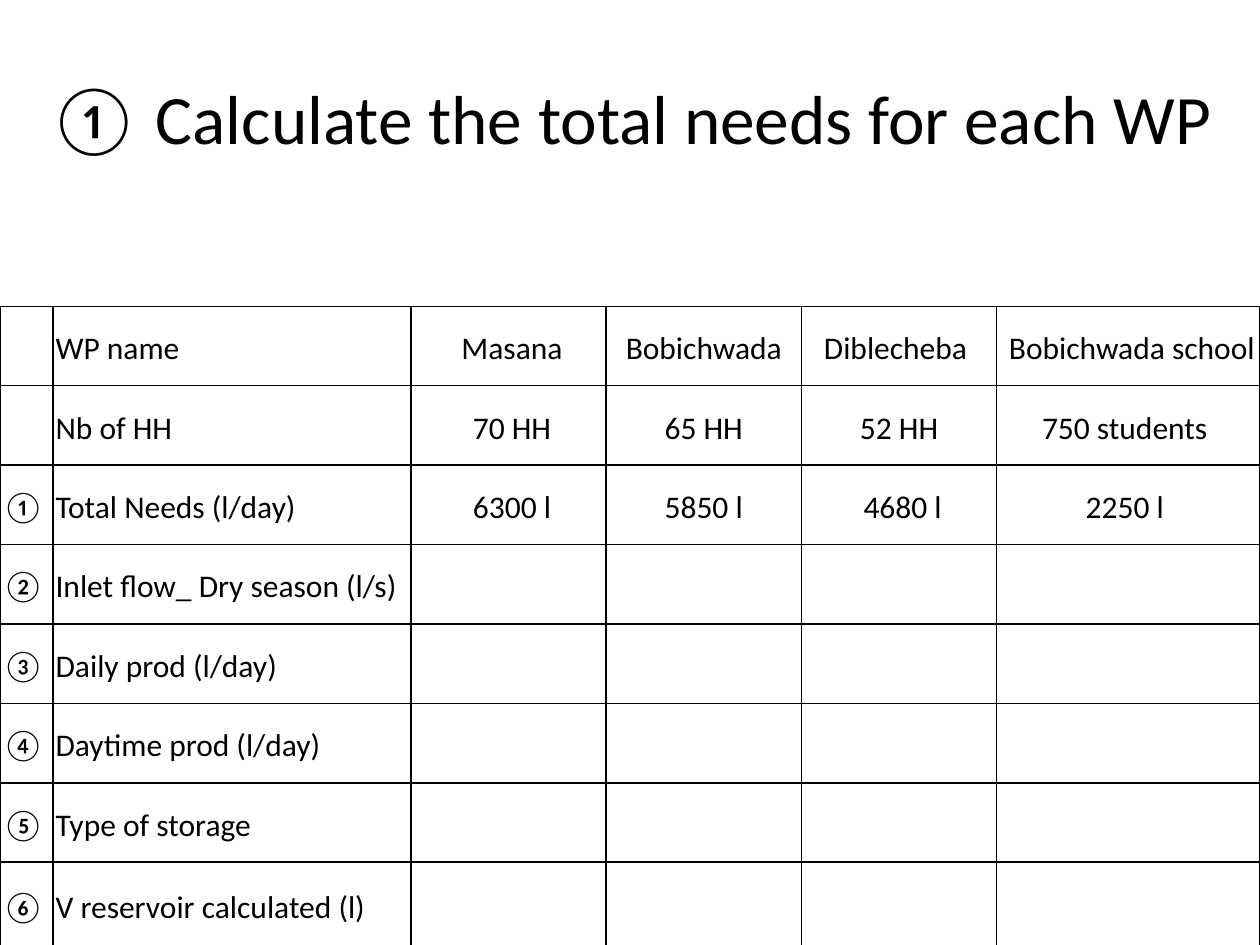
from dataclasses import dataclass

from lxml.etree import SubElement
from pptx import Presentation
from pptx.dml.color import RGBColor
from pptx.enum.text import MSO_ANCHOR, PP_ALIGN
from pptx.oxml.ns import qn
from pptx.table import Table, _Cell
from pptx.text.text import TextFrame
from pptx.util import Pt


@dataclass(frozen=True)
class Theme:
    font: str = "Calibri"
    ink: str = "000000"
    title: float = 39.6
    body: float = 18
    line: float = 1


@dataclass(frozen=True)
class Row:
    mark: str
    label: str
    values: tuple[str, ...] = ("", "", "", "")
    height: float = 45.4


THEME = Theme()
WIDTHS = (30.4, 204.4, 111.6, 111.6, 111.6, 150.4)
ROWS = (
    Row("", "WP name", (" Masana", "Bobichwada", "Diblecheba ", " Bobichwada school")),
    Row("", "Nb of HH", (" 70 HH", "65 HH", "52 HH", "750 students ")),
    Row("①", "Total Needs (l/day)", (" 6300 l", "5850 l", " 4680 l", "2250 l ")),
    Row("②", "Inlet flow_ Dry season (l/s)"),
    Row("③", "Daily prod (l/day)"),
    Row("④", "Daytime prod (l/day)"),
    Row("⑤", "Type of storage"),
    Row("⑥", "V reservoir calculated (l)", height=48.2),
)


def write(frame: TextFrame, text: str, *, size: float, align: PP_ALIGN,
          space: float = 1.0, after: float = 0) -> None:
    para = frame.paragraphs[0]
    para.alignment = align
    para.line_spacing = space
    para.space_after = Pt(after)
    run = para.add_run()
    run.text = text
    run.font.name = THEME.font
    run.font.size = Pt(size)
    run.font.color.rgb = RGBColor.from_string(THEME.ink)


def frame_cell(cell: _Cell) -> None:
    props = cell._tc.get_or_add_tcPr()
    for side in ("lnL", "lnR", "lnT", "lnB"):
        line = SubElement(props, qn(f"a:{side}"), w=str(Pt(THEME.line)))
        fill = SubElement(line, qn("a:solidFill"))
        SubElement(fill, qn("a:srgbClr"), val=THEME.ink)
    cell.fill.background()


def fill_row(table: Table, index: int, row: Row) -> None:
    table.rows[index].height = Pt(row.height)
    for col, text in enumerate((row.mark, row.label, *row.values)):
        cell = table.cell(index, col)
        cell.margin_left = cell.margin_right = Pt(1.4)
        cell.margin_top = cell.margin_bottom = Pt(0)
        cell.vertical_anchor = MSO_ANCHOR.MIDDLE
        frame_cell(cell)
        if text:
            write(cell.text_frame, text, size=THEME.body, space=1.15, after=6,
                  align=PP_ALIGN.LEFT if col < 2 else PP_ALIGN.CENTER)


def main() -> None:
    deck = Presentation()
    deck.slide_width, deck.slide_height = Pt(720), Pt(540)
    slide = deck.slides.add_slide(deck.slide_layouts[6])

    # Table of needs per water point
    height = sum(row.height for row in ROWS)
    table = slide.shapes.add_table(len(ROWS), len(WIDTHS), Pt(0), Pt(175),
                                   Pt(sum(WIDTHS)), Pt(height)).table
    table.first_row = table.horz_banding = False
    for col, width in zip(table.columns, WIDTHS):
        col.width = Pt(width)
    for index, row in enumerate(ROWS):
        fill_row(table, index, row)

    # Title
    frame = slide.shapes.add_textbox(Pt(0), Pt(21.6), Pt(720), Pt(90)).text_frame
    frame.word_wrap = True
    frame.vertical_anchor = MSO_ANCHOR.MIDDLE
    write(frame, "① Calculate the total needs for each WP",
          size=THEME.title, align=PP_ALIGN.CENTER)

    deck.save("out.pptx")


if __name__ == "__main__":
    main()
